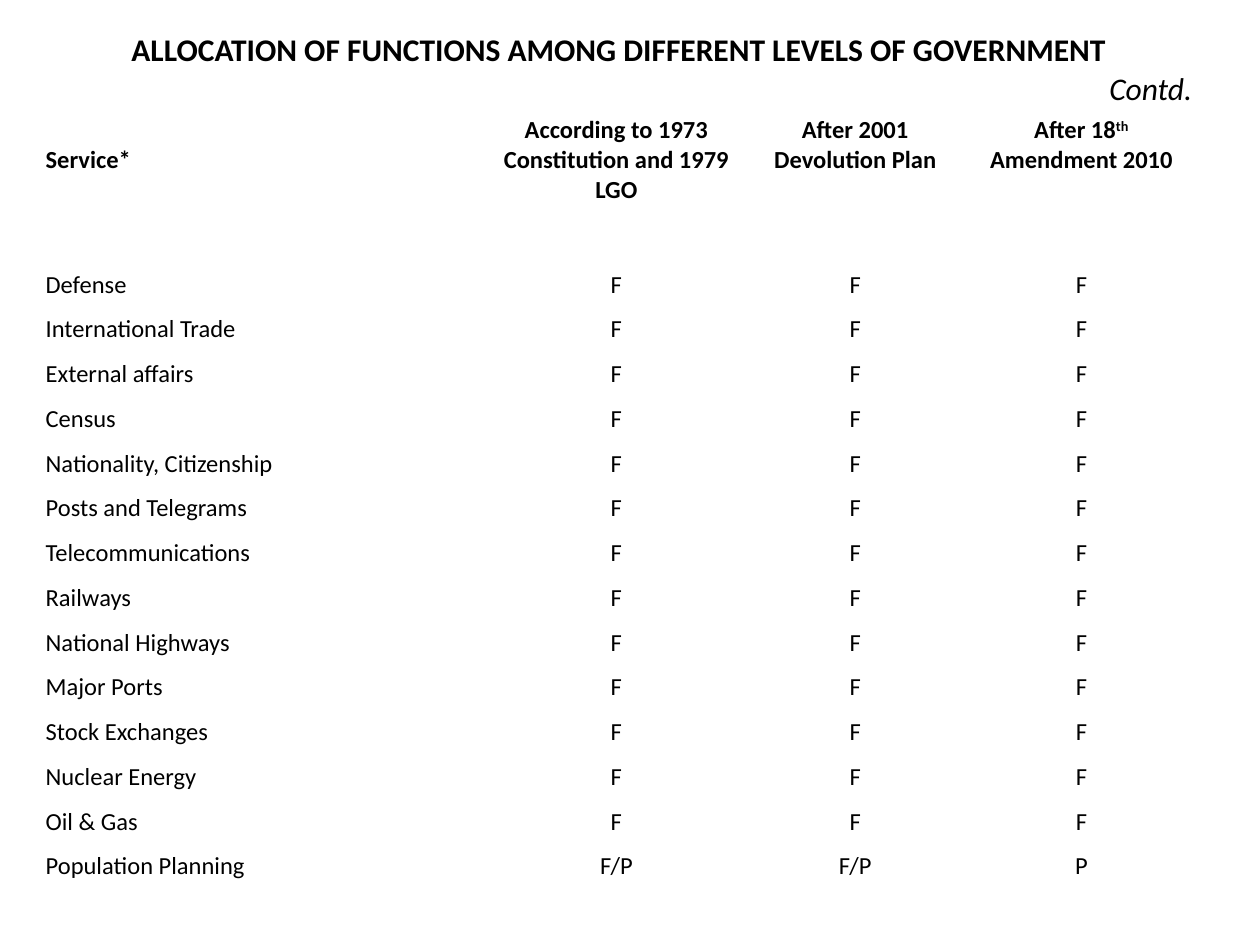
from pptx import Presentation
from pptx.dml.color import RGBColor
from pptx.enum.text import MSO_ANCHOR, PP_ALIGN
from pptx.util import Cm, Pt

# Content
TITLE = "ALLOCATION OF FUNCTIONS AMONG DIFFERENT LEVELS OF GOVERNMENT"
CONTINUED = "Contd."
HEADINGS = [
    ["Service*"],
    ["According to 1973 Constitution and 1979 LGO"],
    ["After 2001 Devolution Plan"],
    ["After 18", "th", " Amendment 2010"],
]
FEDERAL = ("F", "F", "F")
SERVICES = [
    ("Defense", FEDERAL),
    ("International Trade", FEDERAL),
    ("External affairs", FEDERAL),
    ("Census", FEDERAL),
    ("Nationality, Citizenship", FEDERAL),
    ("Posts and Telegrams", FEDERAL),
    ("Telecommunications", FEDERAL),
    ("Railways", FEDERAL),
    ("National Highways", FEDERAL),
    ("Major Ports", FEDERAL),
    ("Stock Exchanges", FEDERAL),
    ("Nuclear Energy", FEDERAL),
    ("Oil & Gas", FEDERAL),
    ("Population Planning", ("F/P", "F/P", "P")),
]

THEME = {"font": "Calibri", "ink": RGBColor(0, 0, 0), "title": Pt(18), "body": Pt(14)}
STYLES = {
    "title": {"size": THEME["title"], "bold": True, "italic": False},
    "continued": {"size": THEME["title"], "bold": False, "italic": True},
    "heading": {"size": THEME["body"], "bold": True, "italic": False},
    "body": {"size": THEME["body"], "bold": False, "italic": False},
}

# Layout
LEFT, TOP = Cm(0.84), Cm(0.64)
COLUMN_WIDTHS = [Cm(9.02), Cm(5.13), Cm(4.5), Cm(4.62)]
ROW_HEIGHTS = [Cm(1.68), Cm(2.82)] + [Cm(0.86)] * len(SERVICES)
CELL_FORMAT = {
    "margin_left": Cm(0.08), "margin_right": Cm(0.08),
    "margin_top": 0, "margin_bottom": 0, "vertical_anchor": MSO_ANCHOR.TOP,
}
HEADING_LINE = Cm(0.6)


def apply(target, values):
    for name, value in values.items():
        setattr(target, name, value)


def write(para, pieces, style, alignment, line_spacing=1.0):
    apply(para, {"alignment": alignment, "line_spacing": line_spacing})
    for piece in pieces:
        span = para.add_run()
        span.text = piece
        apply(span.font, {"name": THEME["font"], **STYLES[style]})
        span.font.color.rgb = THEME["ink"]
        if piece == "th":
            span.font._element.set("baseline", "30000")


def first_para(cell):
    return cell.text_frame.paragraphs[0]


deck = Presentation()
deck.slide_width, deck.slide_height = Cm(25.4), Cm(19.05)
page = deck.slides.add_slide(deck.slide_layouts[6])

# Plain table grid
table = page.shapes.add_table(
    len(ROW_HEIGHTS), len(COLUMN_WIDTHS), LEFT, TOP, sum(COLUMN_WIDTHS), sum(ROW_HEIGHTS)
).table
apply(table, {"first_row": False, "horz_banding": False})
for column, width in zip(table.columns, COLUMN_WIDTHS):
    column.width = width
for row, height in zip(table.rows, ROW_HEIGHTS):
    row.height = height
for cell in table.iter_cells():
    apply(cell, CELL_FORMAT)
    cell.fill.background()

# Title across all columns
title_cell = table.cell(0, 0)
title_cell.merge(table.cell(0, len(COLUMN_WIDTHS) - 1))
write(first_para(title_cell), [TITLE], "title", PP_ALIGN.CENTER)
write(title_cell.text_frame.add_paragraph(), [CONTINUED], "continued", PP_ALIGN.RIGHT)

# Column headings, with the first one a line lower
for index, pieces in enumerate(HEADINGS):
    alignment = PP_ALIGN.CENTER if index else PP_ALIGN.LEFT
    write(first_para(table.cell(1, index)), pieces, "heading", alignment)
table.cell(1, 0).margin_top = HEADING_LINE

# Services and the level responsible for each
for row_index, (service, levels) in enumerate(SERVICES, start=2):
    for index, text in enumerate((service, *levels)):
        alignment = PP_ALIGN.CENTER if index else PP_ALIGN.JUSTIFY
        write(first_para(table.cell(row_index, index)), [text], "body", alignment, 1.5)

deck.save("out.pptx")
